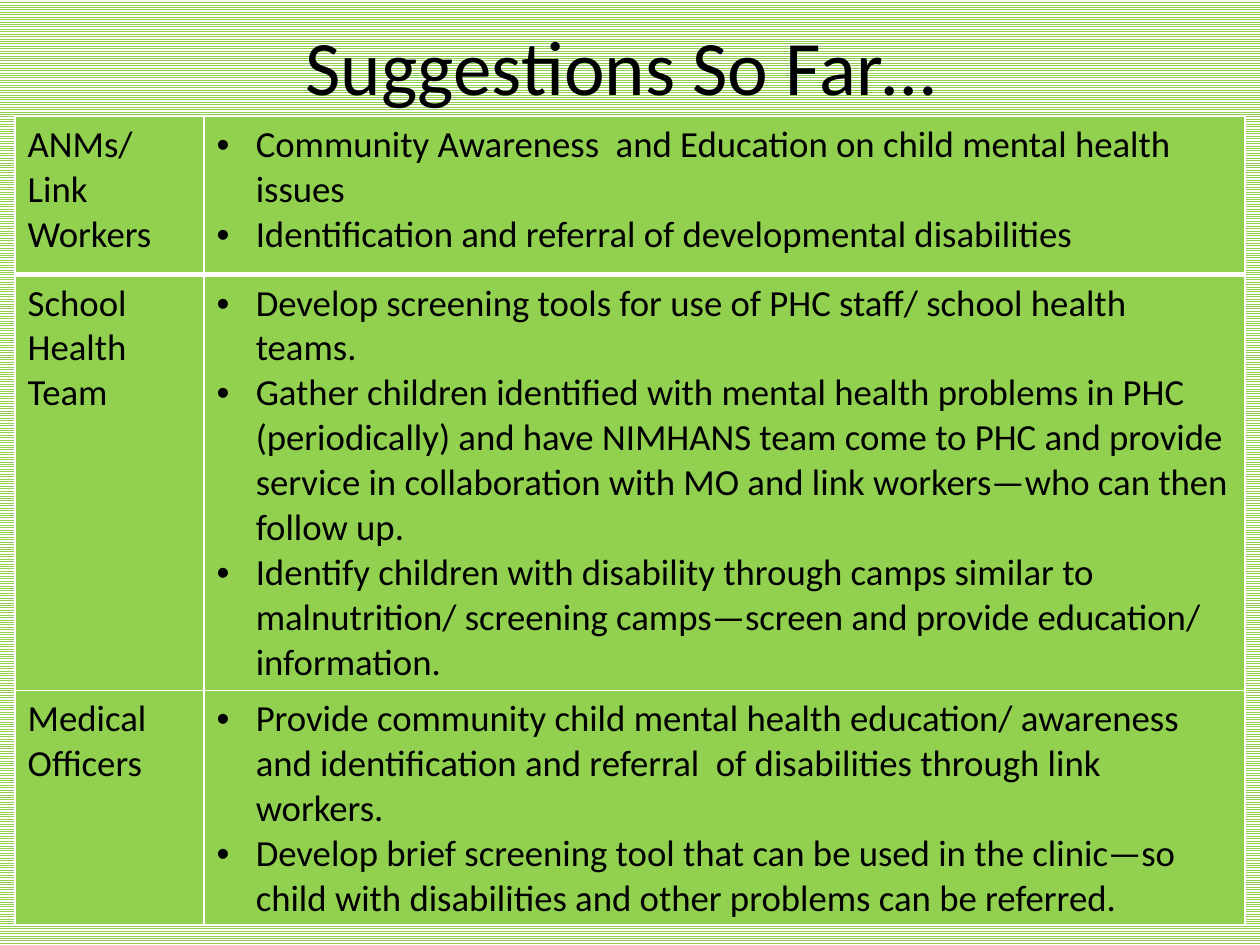
from dataclasses import dataclass

from lxml import etree
from pptx import Presentation
from pptx.dml.color import RGBColor
from pptx.enum import dml, text
from pptx.oxml import ns
from pptx.util import Inches, Pt

GREEN, WHITE, BLACK = "92D050", "FFFFFF", "000000"
FONT = "Calibri"
INDENT = Inches(0.31)
COLUMN_WIDTHS = (1.5, 8.26)


@dataclass
class Suggestion:
    group: str
    points: list[str]
    height: float
    top_border: float = 1
    bottom_border: float = 1


SUGGESTIONS = [
    Suggestion("ANMs/ Link Workers", [
        "Community Awareness  and Education on child mental health issues",
        "Identification and referral of developmental disabilities",
    ], 1.26, bottom_border=3),
    Suggestion("School Health Team", [
        "Develop screening tools for use of PHC staff/ school health teams.",
        "Gather children identified with mental health problems in PHC "
        "(periodically) and have NIMHANS team come to PHC and provide service "
        "in collaboration with MO and link workers—who can then follow up.",
        "Identify children with disability through camps similar to "
        "malnutrition/ screening camps—screen and provide education/ information.",
    ], 3.3, top_border=3),
    Suggestion("Medical Officers", [
        "Provide community child mental health education/ awareness and "
        "identification and referral  of disabilities through link workers.",
        "Develop brief screening tool that can be used in the clinic—so child "
        "with disabilities and other problems can be referred.",
    ], 1.86),
]


def color(value: str) -> RGBColor:
    return RGBColor.from_string(value)


def write(para, words: str, size: float) -> None:
    para.text = words
    para.font.name = FONT
    para.font.size = Pt(size)
    para.font.color.rgb = color(BLACK)


def add_bullet(para) -> None:
    properties = para._p.get_or_add_pPr()
    properties.set("marL", str(INDENT))
    properties.set("indent", str(-INDENT))
    etree.SubElement(properties, ns.qn("a:buFont"), typeface="Arial")
    etree.SubElement(properties, ns.qn("a:buChar"), char="•")


def add_borders(cell, top: float, bottom: float) -> None:
    """Draw white borders; must run before the cell gets its fill."""
    properties = cell._tc.get_or_add_tcPr()
    for side, width in (("L", 1), ("R", 1), ("T", top), ("B", bottom)):
        line = etree.SubElement(properties, ns.qn(f"a:ln{side}"), w=str(Pt(width)))
        fill = etree.SubElement(line, ns.qn("a:solidFill"))
        etree.SubElement(fill, ns.qn("a:srgbClr"), val=WHITE)


def fill_cell(cell, lines: list[str], row: Suggestion, bulleted: bool) -> None:
    add_borders(cell, row.top_border, row.bottom_border)
    cell.fill.solid()
    cell.fill.fore_color.rgb = color(GREEN)
    frame = cell.text_frame
    for index, line in enumerate(lines):
        para = frame.add_paragraph() if index else frame.paragraphs[0]
        if bulleted:
            add_bullet(para)
        write(para, line, 21)


def add_background(page) -> None:
    fill = page.background.fill
    fill.patterned()
    fill.pattern = dml.MSO_PATTERN.NARROW_HORIZONTAL
    fill.fore_color.rgb = color(GREEN)
    fill.back_color.rgb = color(WHITE)


def add_title(page, words: str) -> None:
    box = page.shapes.add_textbox(Inches(0.43), Inches(0.03), Inches(9), Inches(0.97))
    frame = box.text_frame
    frame.word_wrap = True
    frame.vertical_anchor = text.MSO_ANCHOR.MIDDLE
    para = frame.paragraphs[0]
    para.alignment = text.PP_ALIGN.CENTER
    write(para, words, 44)


def add_suggestions(page) -> None:
    table = page.shapes.add_table(
        len(SUGGESTIONS), len(COLUMN_WIDTHS), Inches(0.12), Inches(0.92),
        Inches(sum(COLUMN_WIDTHS)), Inches(sum(row.height for row in SUGGESTIONS)),
    ).table
    table.first_row = table.horz_banding = False
    for column, width in zip(table.columns, COLUMN_WIDTHS):
        column.width = Inches(width)
    for index, row in enumerate(SUGGESTIONS):
        table.rows[index].height = Inches(row.height)
        fill_cell(table.cell(index, 0), [row.group], row, bulleted=False)
        fill_cell(table.cell(index, 1), row.points, row, bulleted=True)


def main() -> None:
    deck = Presentation()
    deck.slide_width, deck.slide_height = Inches(10), Inches(7.5)
    page = deck.slides.add_slide(deck.slide_layouts[6])
    add_background(page)
    add_title(page, "Suggestions So Far…")
    add_suggestions(page)
    deck.save("out.pptx")


if __name__ == "__main__":
    main()
